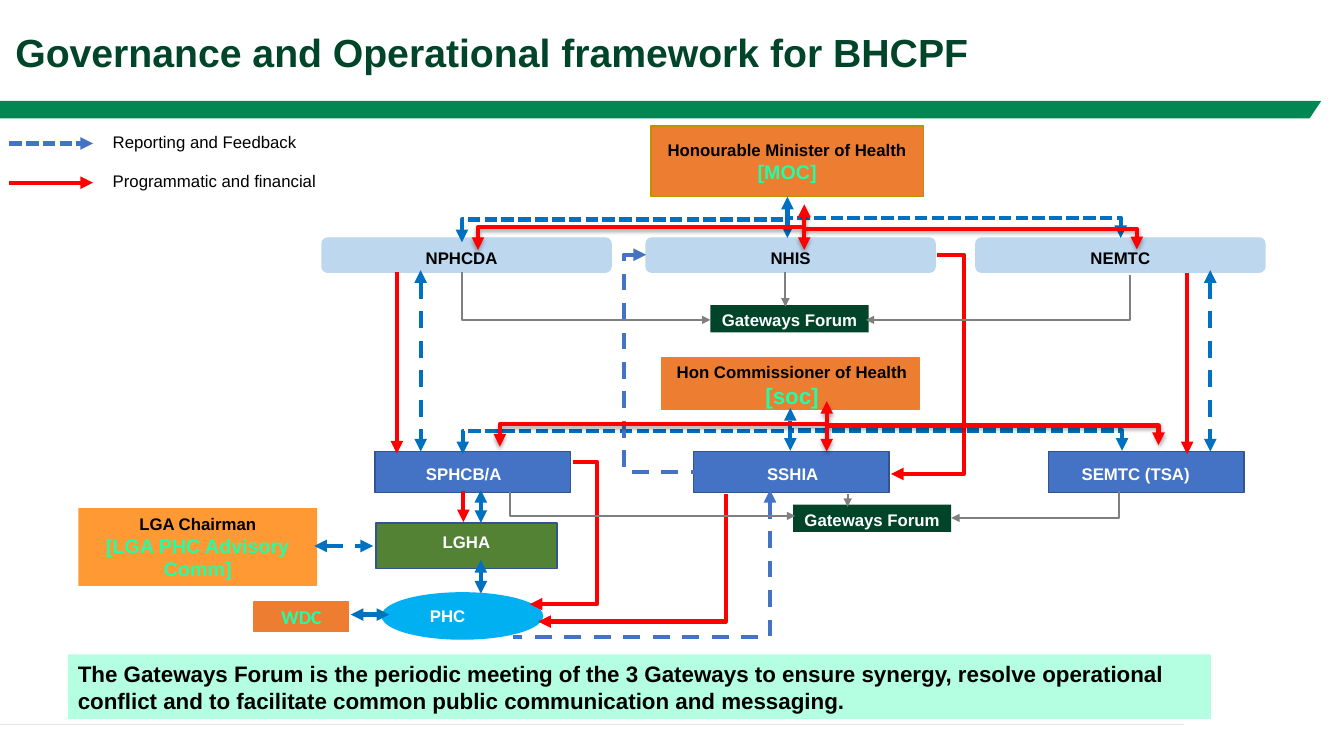
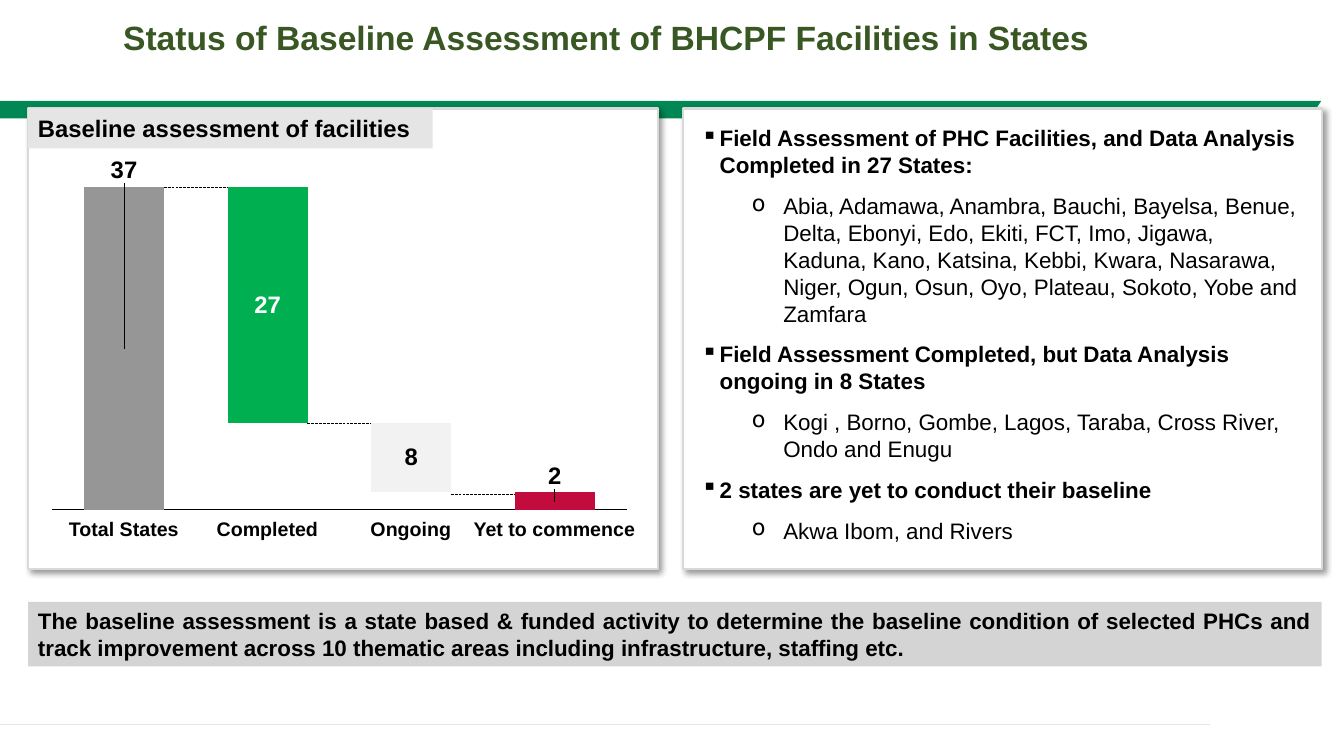
from dataclasses import dataclass
from typing import Any

from lxml import etree
from pptx import Presentation
from pptx.chart.data import CategoryChartData
from pptx.dml.color import RGBColor
from pptx.enum.chart import XL_CHART_TYPE, XL_TICK_LABEL_POSITION, XL_TICK_MARK
from pptx.enum.dml import MSO_LINE
from pptx.enum.shapes import MSO_CONNECTOR, MSO_SHAPE
from pptx.enum.text import MSO_ANCHOR, PP_ALIGN
from pptx.oxml.ns import qn
from pptx.util import Pt

RECT, ROUND, OVAL = MSO_SHAPE.RECTANGLE, MSO_SHAPE.ROUNDED_RECTANGLE, MSO_SHAPE.OVAL
TRIANGLE = MSO_SHAPE.ISOSCELES_TRIANGLE
STRAIGHT, ELBOW = MSO_CONNECTOR.STRAIGHT, MSO_CONNECTOR.ELBOW
SHORT_DASH, DASH, LONG_DASH = MSO_LINE.SQUARE_DOT, MSO_LINE.DASH, MSO_LINE.LONG_DASH
LEFT, CENTER, JUSTIFY = PP_ALIGN.LEFT, PP_ALIGN.CENTER, PP_ALIGN.JUSTIFY
TOP, MIDDLE = MSO_ANCHOR.TOP, MSO_ANCHOR.MIDDLE
STACKED = XL_CHART_TYPE.COLUMN_STACKED
NO_LABELS, NO_TICKS = XL_TICK_LABEL_POSITION.NONE, XL_TICK_MARK.NONE

BLACK, WHITE = "000000", "FFFFFF"
GREEN, DARK_GREEN, MOSS, MINT = "008753", "00442A", "385723", "1EFFA8"
RED, BLUE, ROYAL, NAVY, ORANGE = "FF0000", "0070C0", "4472C4", "325491", "ED7D31"
PALE_BLUE, GRAY, RULE_GRAY = "BDD7EE", "7F7F7F", "E5E5E5"
LEADER_URI = "{CE6537A1-D6FC-4f65-9D91-7224C49458BB}"
LEADER_NS = "http://schemas.microsoft.com/office/drawing/2012/chart"


@dataclass
class Stroke:
    color: str
    width: float = 3
    dash: Any = None
    shadow: Any = None


def rgb(color):
    return RGBColor.from_string(color)


def add_xml(parent, tag, **attributes):
    child = etree.SubElement(parent, qn(tag))
    for name, value in attributes.items():
        child.set(name, str(value))
    return child


def set_shadow(shape, shadow=None):
    """Replace the theme shadow; shadow is (opacity %, blur, distance, angle)."""
    effects = add_xml(shape._element.spPr, "a:effectLst")
    if shadow:
        opacity, blur, distance, angle = shadow
        outer = add_xml(effects, "a:outerShdw", blurRad=Pt(blur), dist=Pt(distance),
                        dir=angle * 60000, algn="tl", rotWithShape=0)
        color = add_xml(outer, "a:srgbClr", val=BLACK)
        add_xml(color, "a:alpha", val=opacity * 1000)


def set_layout(parent, index, **values):
    """Give a chart part a manual layout."""
    layout = etree.Element(qn("c:layout"))
    manual = add_xml(layout, "c:manualLayout")
    for name, value in values.items():
        add_xml(manual, f"c:{name}", val=value)
    parent.insert(index, layout)


class Deck:
    font = "Arial"

    def __init__(self):
        self.presentation = Presentation()
        self.presentation.slide_width, self.presentation.slide_height = Pt(960), Pt(540)
        self.slide = None

    def new_slide(self, title, at, size, color, rule_end):
        self.slide = self.presentation.slides.add_slide(self.presentation.slide_layouts[6])
        self.box((0, 72, 944, 12.5), GREEN)
        self.box((934, 72, 20, 15), WHITE, shape=TRIANGLE)
        self.arrow((0, 517.5), (rule_end, 517.5), Stroke(RULE_GRAY, 1), tail=False)
        self.label((*at, 825, 34), title, size, color, bold=True)

    def set_text(self, shape, lines, align=LEFT, anchor=TOP, inset=(0, 0, 0, 0),
                 bold=False, font=font):
        """Fill a shape with lines of (text, size, colour)."""
        frame = shape.text_frame
        frame.word_wrap = True
        frame.vertical_anchor = anchor
        (frame.margin_left, frame.margin_top,
         frame.margin_right, frame.margin_bottom) = map(Pt, inset)
        frame.text = "\n".join(text for text, _, _ in lines)
        for para, (_, size, color) in zip(frame.paragraphs, lines):
            para.alignment = align
            for span in para.runs:
                span.font.name, span.font.size, span.font.bold = font, Pt(size), bold
                span.font.color.rgb = rgb(color)
        return frame

    def label(self, area, text, size, color=BLACK, align=LEFT, bold=False):
        box = self.slide.shapes.add_textbox(*map(Pt, area))
        self.set_text(box, [(text, size, color)], align, bold=bold)

    def box(self, area, fill, line=None, width=1, shape=RECT, shadow=None):
        box = self.slide.shapes.add_shape(shape, *map(Pt, area))
        box.fill.solid()
        box.fill.fore_color.rgb = rgb(fill)
        if line:
            box.line.color.rgb = rgb(line)
            box.line.width = Pt(width)
        else:
            box.line.fill.background()
        set_shadow(box, shadow)
        return box

    def node(self, area, lines, fill, line=None, shape=RECT, nudge=(0, 0), font=font):
        """Draw a box of the diagram; nudge moves its text off the centre."""
        across, down = nudge
        inset = (3.6 + max(2 * across, 0), max(2 * down, 0),
                 3.6 + max(-2 * across, 0), max(-2 * down, 0))
        self.set_text(self.box(area, fill, line, shape=shape), lines, CENTER, MIDDLE,
                      inset, True, font)

    def note(self, area, text, fill, size=16, align=LEFT):
        self.set_text(self.box(area, fill), [(text, size, BLACK)], align, MIDDLE,
                      (7.2, 3.6, 7.2, 3.6), True)

    def arrow(self, start, end, stroke, bend=None, turn=None, head=False, tail=True):
        """Connect two points. A "bridge" leaves and arrives vertically, a "corner"
        leaves vertically and arrives sideways, a "bracket" runs sideways to turn."""
        (x1, y1), (x2, y2) = start, end
        rotation = 0
        if bend in ("bridge", "corner"):
            rotation = 90 if (x2 - x1) * (y2 - y1) < 0 else 270
            sign = 1 if rotation == 90 else -1
            middle_x, middle_y = (x1 + x2) / 2, (y1 + y2) / 2
            half_x, half_y = sign * (y2 - y1) / 2, sign * (x1 - x2) / 2
            x1, x2 = middle_x - half_x, middle_x + half_x
            y1, y2 = middle_y - half_y, middle_y + half_y
        line = self.slide.shapes.add_connector(
            ELBOW if bend else STRAIGHT, Pt(x1), Pt(y1), Pt(x2), Pt(y2))
        line.line.color.rgb = rgb(stroke.color)
        line.line.width = Pt(stroke.width)
        if stroke.dash:
            line.line.dash_style = stroke.dash
        properties = line._element.spPr
        geometry = properties.find(qn("a:prstGeom"))
        if rotation:
            properties.find(qn("a:xfrm")).set("rot", str(rotation * 60000))
        if bend == "corner":
            geometry.set("prst", "bentConnector2")
        if turn is not None:
            share = round((turn - x1) / (x2 - x1) * 100000)
            add_xml(geometry.find(qn("a:avLst")), "a:gd", name="adj1", fmla=f"val {share}")
        outline = properties.find(qn("a:ln"))
        for shown, tag in ((head, "a:headEnd"), (tail, "a:tailEnd")):
            if shown:
                add_xml(outline, tag, type="triangle")
        set_shadow(line, stroke.shadow)

    def hub(self, left, top, right, drop, rail, stroke):
        """Join a parent at top to three children below it."""
        self.arrow(left, top, stroke, "bridge", head=True)
        self.arrow(right, (top[0], rail), stroke, "corner", head=True, tail=False)
        self.arrow((top[0], rail), (top[0], drop), stroke)

    def bullets(self, area, items):
        """List (text, level) items; the top level is bold."""
        box = self.slide.shapes.add_textbox(*map(Pt, area))
        frame = self.set_text(box, [(text, 16, BLACK) for text, _ in items],
                              inset=(7.2, 3.6, 7.2, 3.6))
        for index, (para, (_, level)) in enumerate(zip(frame.paragraphs, items)):
            margin, hanging, mark = ((13, 13, "▪"), (58.5, 22.5, "o"))[level]
            para.level = level
            para.space_before, para.space_after = Pt(5 if index else 0), Pt(5)
            settings = para._p.get_or_add_pPr()
            settings.set("marL", str(Pt(margin)))
            settings.set("indent", str(-Pt(hanging)))
            add_xml(settings, "a:buChar", char=mark)
            para.runs[0].font.bold = level == 0

    def waterfall(self, area, names, series, points):
        """Draw stacked columns; points are (series, index, fill, label colour, lift)."""
        data = CategoryChartData()
        data.categories = names
        for name, values in series:
            data.add_series(name, values)
        chart = self.slide.shapes.add_chart(STACKED, *map(Pt, area), data).chart
        chart.has_legend = chart.has_title = False
        chart.font.name, chart.font.size = self.font, Pt(17)
        for axis in (chart.category_axis, chart.value_axis):
            axis.has_major_gridlines = False
            axis.tick_label_position = NO_LABELS
            axis.major_tick_mark = axis.minor_tick_mark = NO_TICKS
        chart.category_axis.format.line.color.rgb = rgb(BLACK)
        chart.category_axis.format.line.width = Pt(0.75)
        chart.value_axis.format.line.fill.background()
        chart.value_axis.minimum_scale, chart.value_axis.maximum_scale = 0, 37
        plot = chart.plots[0]
        plot.gap_width, plot.overlap, plot.vary_by_categories = 80, 100, False
        for column in plot.series:
            column.format.fill.background()
            column.data_labels.show_value = False
        for row, index, fill, color, lift in points:
            point = plot.series[row].points[index]
            point.format.fill.solid()
            point.format.fill.fore_color.rgb = rgb(fill)
            font = point.data_label.font
            font.name, font.size, font.bold = self.font, Pt(17), True
            font.color.rgb = rgb(color)
            if lift:
                labels = plot.series[row].data_labels._element
                for tag in labels.findall(qn("c:dLbl")):
                    if tag.find(qn("c:idx")).get("val") == str(index):
                        set_layout(tag, 1, x=0, y=-lift)
        extension = add_xml(add_xml(plot.series[0].data_labels._element, "c:extLst"),
                            "c:ext", uri=LEADER_URI)
        etree.SubElement(extension, f"{{{LEADER_NS}}}showLeaderLines",
                         nsmap={"c15": LEADER_NS}).set("val", "1")
        plot_area = chart._chartSpace.chart.plotArea
        for old in plot_area.findall(qn("c:layout")):
            plot_area.remove(old)
        set_layout(plot_area, 0, layoutTarget="inner", xMode="edge", yMode="edge",
                   x=0.015, y=0.091, w=0.969, h=0.885)


def framework_slide(deck):
    deck.new_slide("Governance and Operational framework for BHCPF", (11, 20), 28,
                   DARK_GREEN, 846)
    money, feedback = Stroke(RED), Stroke(BLUE, dash=SHORT_DASH)
    exchange, report = Stroke(BLUE, dash=DASH), Stroke(ROYAL, dash=DASH)
    forum = Stroke(GRAY, 1.5)
    raised = Stroke(RED, shadow=(35, 3.1, 1.8, 90))

    for y, text, stroke in ((102.5, "Reporting and Feedback", Stroke(ROYAL, dash=SHORT_DASH)),
                            (130.5, "Programmatic and financial", money)):
        deck.arrow((6.5, y), (66.5, y), stroke)
        deck.label((80.5, y - 8.5, 175, 15), text, 12)

    deck.node((465, 90, 194.5, 50.5), [("Honourable Minister of Health", 12, BLACK),
              ("[MOC]", 14, MINT)], ORANGE, "BF9000")
    deck.node((473, 255.5, 183.5, 37), [("Hon Commissioner of Health", 12, BLACK),
              ("[soc]", 16, MINT)], ORANGE, ORANGE, nudge=(1, 1.5))
    deck.node((56, 363, 170.5, 55.5), [("LGA Chairman", 12, BLACK),
              ("[LGA PHC Advisory Comm]", 14, MINT)], "FF9933")
    deck.node((181.5, 430, 67.5, 21), [("WDC", 14, MINT)], ORANGE, ORANGE, font="Calibri")
    for x, text, nudge in ((230, "NPHCDA", -3.5), (461.5, "NHIS", 0), (697, "NEMTC", 0)):
        deck.node((x, 170, 206.5, 24.5), [(text, 12, BLACK)], PALE_BLUE, PALE_BLUE,
                  ROUND, (nudge, 2))
    for x, text, nudge in ((268, "SPHCB/A", -6.5), (495.5, "SSHIA", 1),
                           (749, "SEMTC (TSA)", -7.5)):
        deck.node((x, 322.5, 139.5, 29.5), [(text, 12, WHITE)], ROYAL, NAVY,
                  nudge=(nudge, 1.5))
    deck.node((268.5, 373.5, 129.5, 32.5), [("LGHA", 12, WHITE)], "548235", NAVY,
              nudge=(0, -2.5))
    deck.node((273, 423.5, 114.5, 33), [("PHC", 12, WHITE)], "00B0F0", "00B0F0", OVAL,
              (-10.5, 0))
    for x, y in ((507.5, 218), (566.5, 360.5)):
        deck.node((x, y, 113, 19.5), [("Gateways Forum", 12, WHITE)], DARK_GREEN,
                  nudge=(0, 1))

    deck.hub((330, 173), (562.5, 140.5), (800.5, 170), 170, 155.5, feedback)
    deck.hub((330.5, 324.5), (564.5, 291.5), (801.5, 322), 322, 307.5, feedback)
    for x, top, bottom in ((283.5, 194.5, 324), (848, 195, 324.5), (331, 350.5, 373)):
        deck.arrow((x, top), (x, bottom), money)
    deck.arrow((518.5, 353), (384.5, 444), money, "corner")
    deck.arrow((669.5, 182), (636.5, 338.5), money, "bracket", 688.5)
    deck.arrow((409, 330), (378.5, 431.5), money, "bracket", 426.5)
    deck.arrow((461.5, 182), (495.5, 337), report, "bracket", 445.5, head=True, tail=False)
    deck.arrow((550, 350), (366.5, 455), report, "corner", head=True, tail=False)
    for start, end in (((864.5, 193), (864.5, 322.5)), ((300.5, 193), (300.5, 322.5)),
                       ((343.5, 350), (343.5, 373.5)), ((343.5, 400), (343.5, 424)),
                       ((224.5, 390), (266.5, 390)), ((278, 439), (250.5, 439))):
        deck.arrow(start, end, exchange, head=True)
    for start, end, bend in (((561, 194.5), (561, 219), None),
                             ((605.5, 353), (605.5, 362), None),
                             ((807, 196.5), (618.5, 228.5), "corner"),
                             ((330, 194.5), (507.5, 228.5), "corner"),
                             ((364.5, 351.5), (568, 368.5), "corner"),
                             ((799, 350.5), (679.5, 370), "corner")):
        deck.arrow(start, end, forum, bend)
    deck.hub((341.5, 178.5), (574.5, 146), (812, 178), 178.5, 163.5, raised)
    deck.hub((357, 319), (590.5, 286.5), (827.5, 318), 322.5, 304, raised)
    deck.note((48.5, 467.5, 816.5, 46), "The Gateways Forum is the periodic meeting of the 3 "
              "Gateways to ensure synergy, resolve operational conflict and to facilitate "
              "common public communication and messaging.", "B4FFE2")


def baseline_slide(deck):
    deck.new_slide("Status of Baseline Assessment of BHCPF Facilities in States", (88, 12),
                   24, MOSS, 864)
    for x, width in ((20, 450), (488, 456)):
        deck.box((x, 77.5, width, 329), WHITE, "D9D9D9", 1.5, shadow=(40, 4, 3, 45))
    deck.note((20, 77.5, 289, 28.5), "Baseline assessment of facilities", RULE_GRAY, 17)

    names = ["Total States", "Completed", "Ongoing", "Yet to commence"]
    step, first_center = 102.5, 88.5
    for index, y in enumerate((134, 302.5, 353)):
        x = first_center + 28.5 + index * step
        deck.arrow((x, y), (x + 45.5, y), Stroke(BLACK, 0.25, LONG_DASH), tail=False)
    deck.waterfall((31, 110, 423.5, 260.5), names,
                   [("Series 1", (37, 10, 2, 2)), ("Series 2", (None, 27, 8, None))],
                   [(0, 0, "969696", BLACK, 0.49), (0, 3, "C30C3E", BLACK, 0.07),
                    (1, 1, "00B050", WHITE, 0), (1, 2, "F2F2F2", BLACK, 0)])
    for index, name in enumerate(names):
        deck.label((first_center - 60 + index * step, 369, 120, 18), name, 14,
                   align=CENTER, bold=True)

    deck.bullets((494, 85.5, 440, 310), [
        ("Field Assessment of PHC Facilities, and Data Analysis Completed in 27 States:", 0),
        ("Abia, Adamawa, Anambra, Bauchi, Bayelsa, Benue, Delta, Ebonyi, Edo, Ekiti, FCT, "
         "Imo, Jigawa, Kaduna, Kano, Katsina, Kebbi, Kwara, Nasarawa, Niger, Ogun, Osun, "
         "Oyo, Plateau, Sokoto, Yobe and Zamfara", 1),
        ("Field Assessment Completed, but Data Analysis ongoing in 8 States", 0),
        ("Kogi , Borno, Gombe, Lagos, Taraba, Cross River, Ondo and Enugu", 1),
        ("2 states are yet to conduct their baseline", 0),
        ("Akwa Ibom, and Rivers", 1)])
    deck.note((20, 430, 924, 46), "The baseline assessment is a state based & funded activity "
              "to determine the baseline condition of selected PHCs and track improvement "
              "across 10 thematic areas including infrastructure, staffing etc.",
              "D4D4D4", align=JUSTIFY)


def main():
    deck = Deck()
    framework_slide(deck)
    baseline_slide(deck)
    deck.presentation.save("out.pptx")


if __name__ == "__main__":
    main()
